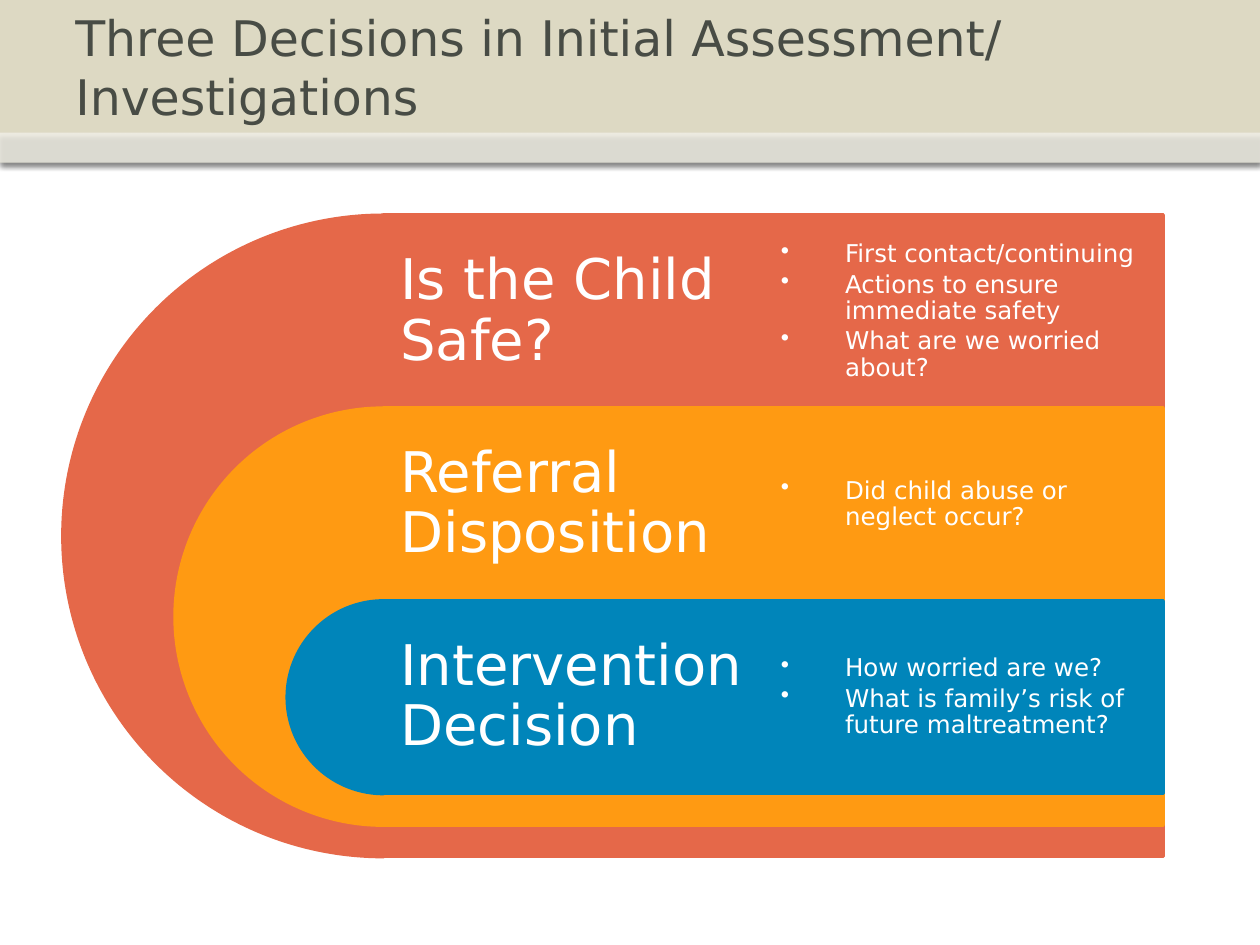
from dataclasses import dataclass
from lxml.etree import SubElement as Sub
from pptx import Presentation
from pptx.dml.color import RGBColor as RGB
from pptx.enum.shapes import MSO_SHAPE as Kind
from pptx.enum.text import MSO_ANCHOR as Anchor
from pptx.oxml.ns import qn
from pptx.util import Pt


@dataclass(frozen=True)
class Theme:
    font: str = "DejaVu Sans"
    sand: str = "DDD9C3"
    white: str = "FFFFFF"
    gray: str = "484C45"
    shade: str = "000000"
    title: int = 28
    head: int = 32
    body: int = 14


LOOK = Theme()
WIDE, HIGH = 720, 540
MID, TOP = 219.2, 123
ROW, SHRINK = 110.2, 128.2
FULL = 366.5
SPAN = 222.8
ROWS = [
    ("E56849", "Is the Child Safe?",
     ["First contact/continuing", "Actions to ensure immediate safety",
      "What are we worried about?"]),
    ("FF9A12", "Referral Disposition", ["Did child abuse or neglect occur?"]),
    ("0085BA", "Intervention Decision",
     ["How worried are we?", "What is family’s risk of future maltreatment?"]),
]


def add_form(slide, kind, box, color, edge=0):
    form = slide.shapes.add_shape(kind, *map(Pt, box))
    form.shadow.inherit = False
    form.fill.solid()
    form.fill.fore_color.rgb = RGB.from_string(color)
    if edge:
        form.line.color.rgb = RGB.from_string(color)
        form.line.width = Pt(edge)
    else:
        form.line.fill.background()
    return form


def add_band(slide, box, color, alpha=None):
    band = add_form(slide, Kind.RECTANGLE, box, color)
    props = band._element.spPr
    if alpha:
        tint = props.find(".//" + qn("a:srgbClr"))
        Sub(tint, qn("a:alpha"), val=str(alpha * 1000))
    glow = Sub(props.find(qn("a:effectLst")), qn("a:outerShdw"),
               blurRad=str(Pt(3.1)), dist=str(Pt(1.8)), dir="5400000",
               algn="ctr", rotWithShape="0")
    tint = Sub(glow, qn("a:srgbClr"), val=LOOK.shade)
    Sub(tint, qn("a:alpha"), val="35000")


def add_dot(para):
    props = para._p.get_or_add_pPr()
    props.set("marL", str(Pt(36.7)))
    props.set("indent", str(Pt(-36.7)))
    Sub(props, qn("a:buChar"), char="•")


def add_text(slide, box, lines, size, color, pad, space=1, dots=False):
    frame = slide.shapes.add_textbox(*map(Pt, box)).text_frame
    frame.word_wrap = True
    frame.vertical_anchor = Anchor.MIDDLE
    frame.margin_left = frame.margin_right = Pt(pad[0])
    frame.margin_top = frame.margin_bottom = Pt(pad[1])
    for i, line in enumerate(lines):
        para = frame.add_paragraph() if i else frame.paragraphs[0]
        para.line_spacing = space
        if dots:
            para.space_after = Pt(2.1)
            add_dot(para)
        run = para.add_run()
        run.text = line
        run.font.name = LOOK.font
        run.font.size = Pt(size)
        run.font.color.rgb = RGB.from_string(color)


def add_layer(slide, i, color):
    top, size = TOP + i * ROW, FULL - i * SHRINK
    pie = add_form(slide, Kind.PIE, (MID - size / 2, top, size, size), color, 2)
    pie.adjustments[0], pie.adjustments[1] = 54, 162
    add_form(slide, Kind.RECTANGLE, (MID, top, 2 * SPAN, size), color, 2)


def main():
    deck = Presentation()
    deck.slide_width, deck.slide_height = Pt(WIDE), Pt(HIGH)
    slide = deck.slides.add_slide(deck.slide_layouts[6])
    add_band(slide, (0, 0, WIDE, 93), LOOK.sand)
    add_band(slide, (0, 75.8, WIDE, 17.2), LOOK.white, 53)
    add_text(slide, (36, 0, 648, 75.6),
             ["Three Decisions in Initial Assessment/ Investigations"],
             LOOK.title, LOOK.gray, (7.2, 3.6))
    for i, (color, head, notes) in enumerate(ROWS):
        top = TOP + i * ROW
        add_layer(slide, i, color)
        add_text(slide, (MID, top, SPAN, ROW), [head],
                 LOOK.head, LOOK.white, (9.6, 9.6), 0.9)
        add_text(slide, (MID + SPAN, top, SPAN, ROW), notes,
                 LOOK.body, LOOK.white, (4.2, 4.2), 0.9, True)
    deck.save("out.pptx")


if __name__ == "__main__":
    main()
